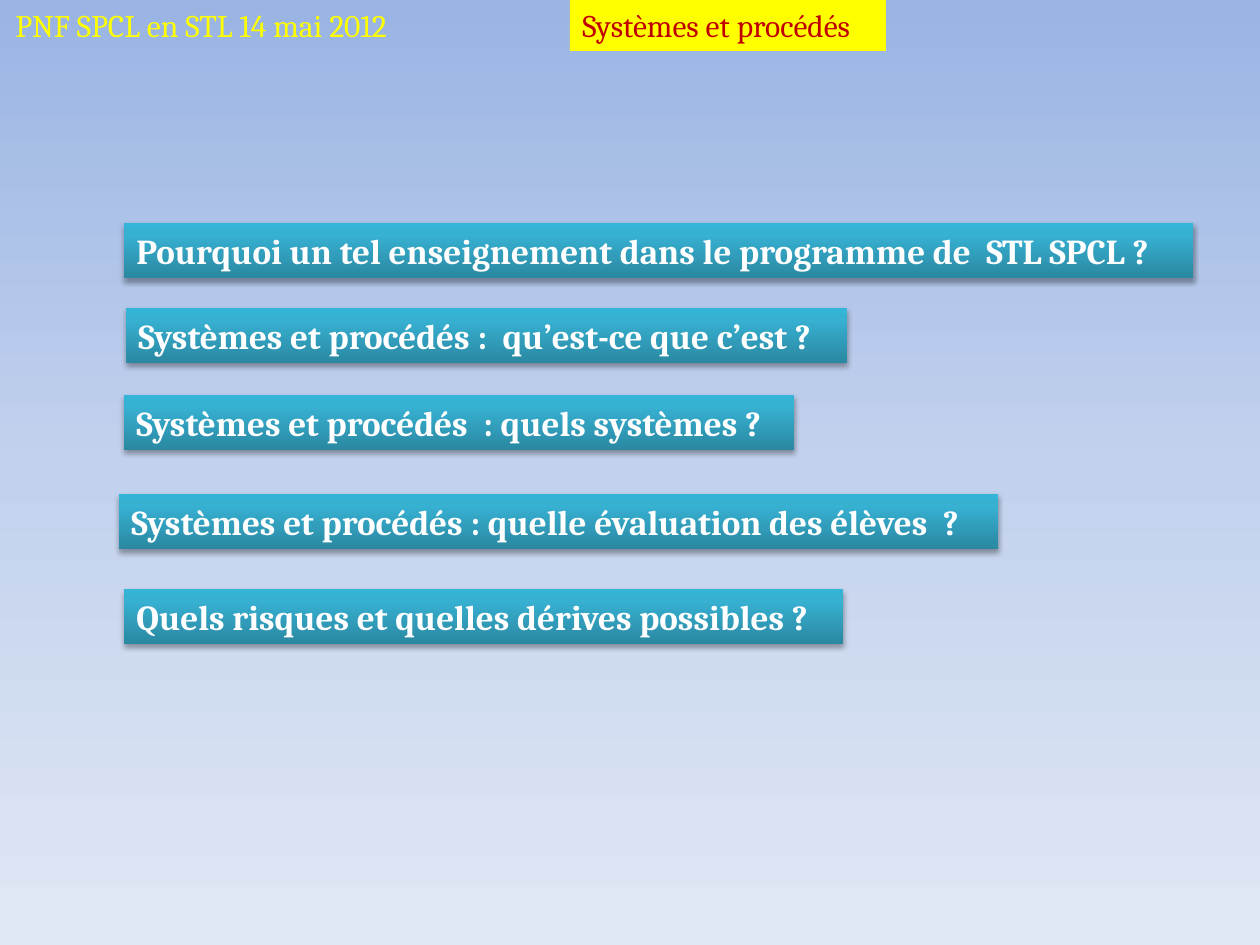
import dataclasses
import typing

import lxml.etree
import pptx
import pptx.dml.color
import pptx.enum.shapes
import pptx.enum.text
import pptx.oxml.ns
import pptx.util

PX_PER_INCH = 126
FONT = "Cambria"
QUESTION_HEIGHT = 55
HEADER_HEIGHT = 51
Stops = tuple[tuple[int, str], ...]
SKY: Stops = ((0, "9AB5E4"), (50, "C2D1ED"), (100, "E1E8F5"))
TEAL: Stops = ((0, "2A88A2"), (80, "37B1D2"), (100, "34B4D6"))


@dataclasses.dataclass(frozen=True)
class Question:
    """One question banner of the outline."""

    left: int
    top: int
    width: int
    text: str


QUESTIONS = (
    Question(124, 223, 1069, "Pourquoi un tel enseignement dans le programme de  STL SPCL ?"),
    Question(126, 308, 721, "Systèmes et procédés :  qu’est-ce que c’est ?"),
    Question(124, 395, 670, "Systèmes et procédés  : quels systèmes ?"),
    Question(119, 494, 879, "Systèmes et procédés : quelle évaluation des élèves  ?"),
    Question(124, 589, 719, "Quels risques et quelles dérives possibles ?"),
)


def px(length: int) -> pptx.util.Emu:
    """Turn pixels into EMU."""
    return pptx.util.Emu(round(length * 914400 / PX_PER_INCH))


def colour(value: str) -> pptx.dml.color.RGBColor:
    """Turn a hex string into a colour."""
    return pptx.dml.color.RGBColor.from_string(value)


def add_node(parent: typing.Any, tag: str, **attributes: typing.Any) -> typing.Any:
    """Append a drawing element to a parent."""
    values = {name: str(value) for name, value in attributes.items()}
    return lxml.etree.SubElement(parent, pptx.oxml.ns.qn(tag), values)


def set_gradient(fill: typing.Any, root: typing.Any, stops: Stops, angle: int) -> None:
    """Give a fill a linear gradient, its angle counted counter-clockwise."""
    fill.gradient()
    fill.gradient_angle = angle
    stop_list = root.find(".//" + pptx.oxml.ns.qn("a:gsLst"))
    for old_stop in list(stop_list):
        stop_list.remove(old_stop)
    for position, value in stops:
        stop = add_node(stop_list, "a:gs", pos=position * 1000)
        add_node(stop, "a:srgbClr", val=value)


def add_soft_shadow(shape: typing.Any) -> None:
    """Put a soft shadow below a shape."""
    effects = shape._element.spPr.find(pptx.oxml.ns.qn("a:effectLst"))
    shadow = add_node(effects, "a:outerShdw", blurRad=40000, dist=23000,
                      dir=5400000, rotWithShape=0)
    add_node(add_node(shadow, "a:srgbClr", val="000000"), "a:alpha", val=35000)


def set_label(shape: typing.Any, text: str, size: int, value: str, bold: bool = False) -> None:
    """Write one unwrapped line of left-aligned text."""
    frame = shape.text_frame
    frame.text = text
    frame.word_wrap = False
    frame.auto_size = pptx.enum.text.MSO_AUTO_SIZE.SHAPE_TO_FIT_TEXT
    frame.vertical_anchor = pptx.enum.text.MSO_ANCHOR.TOP
    paragraph = frame.paragraphs[0]
    paragraph.alignment = pptx.enum.text.PP_ALIGN.LEFT
    font = paragraph.runs[0].font
    font.name = FONT
    font.size = pptx.util.Pt(size)
    font.bold = bold
    font.color.rgb = colour(value)


def add_banner(slide: typing.Any, left: int, top: int, width: int, height: int) -> typing.Any:
    """Add a rectangle without line or inherited shadow."""
    banner = slide.shapes.add_shape(pptx.enum.shapes.MSO_SHAPE.RECTANGLE,
                                    px(left), px(top), px(width), px(height))
    banner.shadow.inherit = False
    banner.line.fill.background()
    return banner


def add_header(slide: typing.Any) -> None:
    """Add the topic tag and the event name along the top edge."""
    topic = add_banner(slide, 570, 0, 316, HEADER_HEIGHT)
    topic.fill.solid()
    topic.fill.fore_color.rgb = colour("FFFF00")
    set_label(topic, "Systèmes et procédés", 18, "C00000")
    event = slide.shapes.add_textbox(px(3), px(0), px(435), px(HEADER_HEIGHT))
    set_label(event, "PNF SPCL en STL 14 mai 2012", 18, "FFFF00")


def add_question(slide: typing.Any, question: Question) -> None:
    """Add one question banner."""
    banner = add_banner(slide, question.left, question.top, question.width, QUESTION_HEIGHT)
    set_gradient(banner.fill, banner._element, TEAL, 90)
    add_soft_shadow(banner)
    set_label(banner, question.text, 20, "FFFFFF", bold=True)


def main() -> None:
    """Build the slide and save it."""
    presentation = pptx.Presentation()
    presentation.slide_width = pptx.util.Inches(10)
    presentation.slide_height = pptx.util.Inches(7.5)
    slide = presentation.slides.add_slide(presentation.slide_layouts[6])
    set_gradient(slide.background.fill, slide._element, SKY, 270)
    add_header(slide)
    for question in QUESTIONS:
        add_question(slide, question)
    presentation.save("out.pptx")


if __name__ == "__main__":
    main()
